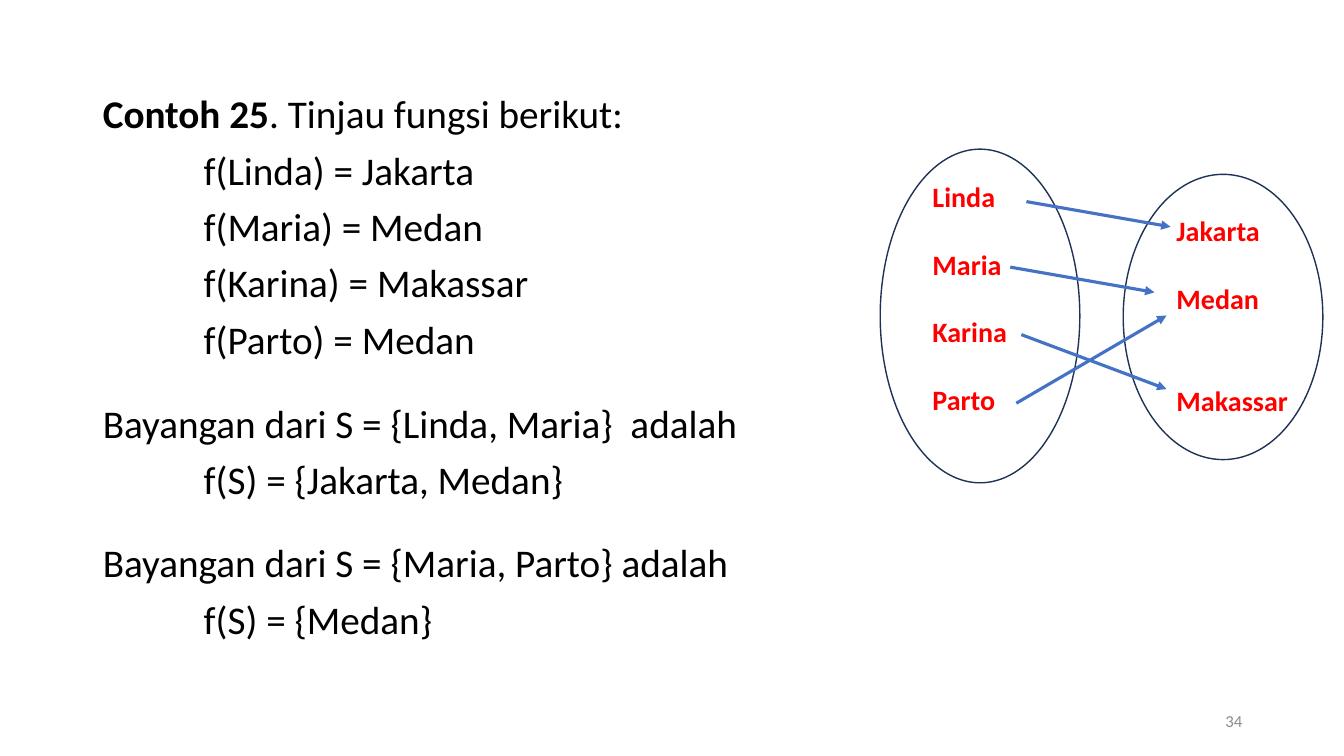
from lxml import etree
from pptx import Presentation
from pptx.dml.color import RGBColor
from pptx.enum.shapes import MSO_CONNECTOR, MSO_SHAPE
from pptx.enum.text import MSO_ANCHOR, MSO_AUTO_SIZE, PP_ALIGN
from pptx.oxml import parse_xml
from pptx.oxml.ns import nsdecls, qn
from pptx.util import Inches, Pt

BLACK = RGBColor(0x00, 0x00, 0x00)
RED = RGBColor(0xFF, 0x00, 0x00)
NAVY = RGBColor(0x1E, 0x32, 0x56)
BLUE = RGBColor(0x44, 0x72, 0xC4)
FONT = "Calibri"


def set_font(font, size, color, bold=None):
    font.name = FONT
    font.size = Pt(size)
    font.color.rgb = color
    font.bold = bold


presentation = Presentation()
presentation.slide_width = Inches(13.33)
presentation.slide_height = Inches(7.5)
slide = presentation.slides.add_slide(presentation.slide_layouts[1])
title = slide.shapes.title
title.element.getparent().remove(title.element)

body = slide.placeholders[1]
body.left, body.top = Inches(0.92), Inches(0.89)
body.width, body.height = Inches(11.5), Inches(6.26)
body_frame = body.text_frame
body_frame.auto_size = MSO_AUTO_SIZE.NONE
body_frame.vertical_anchor = MSO_ANCHOR.TOP

body_lines = [
    ("Contoh 25", 0, 0),
    ("f(Linda) = Jakarta", 1, 10),
    ("f(Maria) = Medan", 1, 10),
    ("f(Karina) = Makassar", 1, 10),
    ("f(Parto) = Medan", 1, 10),
    ("Bayangan dari S = {Linda, Maria}  adalah", 0, 30),
    ("f(S) = {Jakarta, Medan}", 1, 10),
    ("Bayangan dari S = {Maria, Parto} adalah", 0, 29),
    ("f(S) = {Medan}", 1, 10),
]
for index, (text, indent, space) in enumerate(body_lines):
    paragraph = body_frame.add_paragraph() if index else body_frame.paragraphs[0]
    properties = paragraph._p.get_or_add_pPr()
    properties.set("marL", str(Inches(indent)))
    properties.set("indent", "0")
    etree.SubElement(properties, qn("a:buNone"))
    paragraph.line_spacing = 0.9
    paragraph.space_before = Pt(space)
    set_font(paragraph.font, 28, BLACK)
    paragraph.add_run().text = text
heading = body_frame.paragraphs[0]
heading.runs[0].font.bold = True
heading.add_run().text = ". Tinjau fungsi berikut:"

number_box = slide.shapes.add_textbox(Inches(9.42), Inches(6.95), Inches(3), Inches(0.4))
number_frame = number_box.text_frame
number_frame.word_wrap = True
number_frame.vertical_anchor = MSO_ANCHOR.MIDDLE
number_frame.paragraphs[0].alignment = PP_ALIGN.RIGHT
number_frame.paragraphs[0]._p.append(parse_xml(
    f'<a:fld {nsdecls("a")} id="{{B6F15528-21DE-4FAA-801E-634DDDAF4B2B}}" type="slidenum">'
    '<a:rPr lang="id-ID" sz="1200"><a:solidFill><a:srgbClr val="8C8C8C"/></a:solidFill>'
    f'<a:latin typeface="{FONT}"/></a:rPr><a:t>34</a:t></a:fld>'))
presentation.element.set("firstSlideNum", "34")

line_height = 24.4
label_columns = [
    (9.15, 1.73, 1.03, 2.46, [("Linda", 0), ("Maria", 1), ("Karina", 1), ("Parto", 1)]),
    (11.57, 2.07, 1.43, 2.12, [("Jakarta", 0), ("Medan", 1), ("Makassar", 2)]),
]
for left, top, width, height, labels in label_columns:
    box = slide.shapes.add_textbox(Inches(left), Inches(top), Inches(width), Inches(height))
    box.text_frame.word_wrap = True
    for index, (label, gap_lines) in enumerate(labels):
        paragraph = box.text_frame.add_paragraph() if index else box.text_frame.paragraphs[0]
        paragraph.text = label
        paragraph.space_before = Pt(gap_lines * line_height)
        set_font(paragraph.font, 20, RED, True)

for left, top, height in [(8.73, 1.48, 3.31), (11.14, 1.73, 2.83)]:
    ellipse = slide.shapes.add_shape(
        MSO_SHAPE.OVAL, Inches(left), Inches(top), Inches(1.98), Inches(height))
    ellipse.shadow.inherit = False
    ellipse.fill.background()
    ellipse.line.color.rgb = NAVY
    ellipse.line.width = Pt(1)

mappings = [
    (10.18, 2, 11.61, 2.25),
    (10.02, 2.65, 11.45, 2.9),
    (10.13, 3.32, 11.57, 3.86),
    (10.08, 4, 11.57, 3.13),
]
for ends in mappings:
    arrow = slide.shapes.add_connector(MSO_CONNECTOR.STRAIGHT, *map(Inches, ends))
    arrow.line.color.rgb = BLUE
    arrow.line.width = Pt(2.25)
    etree.SubElement(arrow.line._get_or_add_ln(), qn("a:tailEnd"), type="triangle")
    etree.SubElement(arrow._element.spPr, qn("a:effectLst"))

presentation.save("out.pptx")
